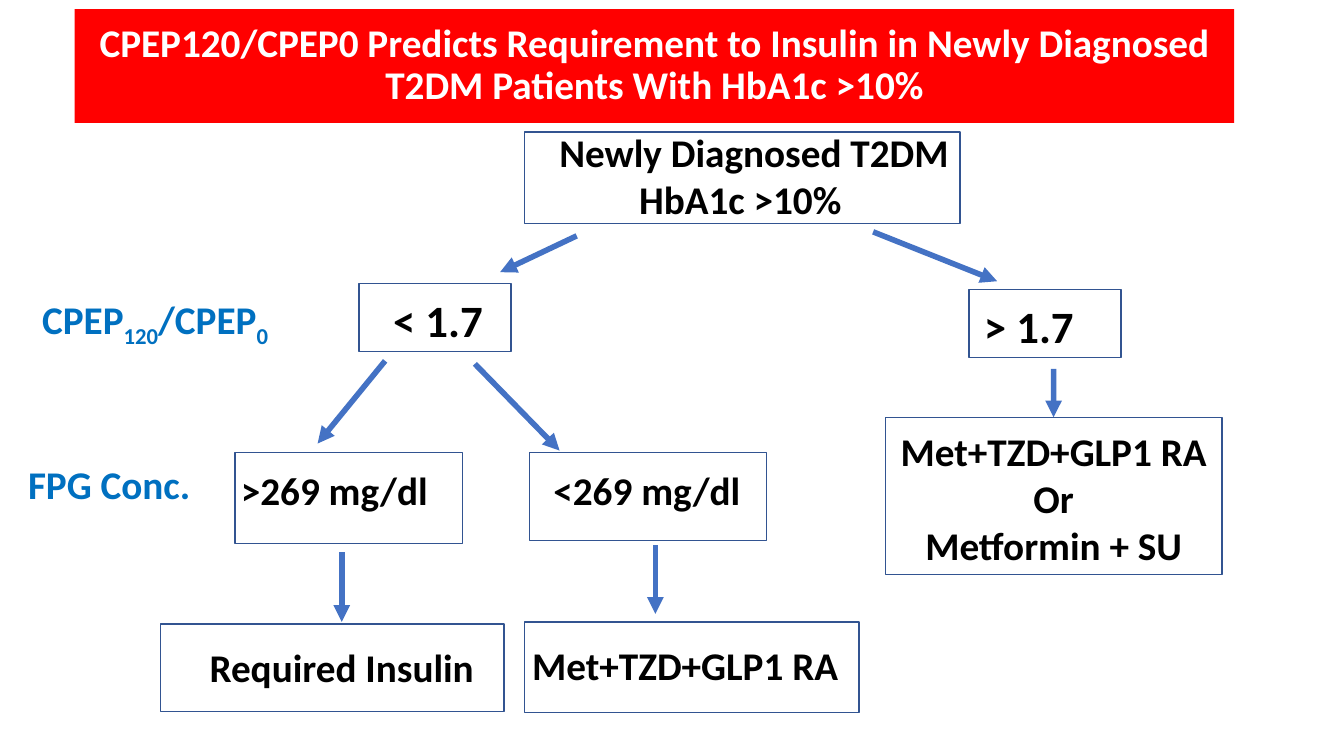
from dataclasses import dataclass

import pptx
import pptx.dml.color
import pptx.enum.shapes
import pptx.enum.text
import pptx.oxml
import pptx.oxml.ns
import pptx.util
from pptx.util import Inches

COLORS = {
    "title_fill": "FF0000",
    "title_text": "FFFFFF",
    "text": "000000",
    "row_label": "0070C0",
    "border": "325491",
    "arrow": "4472C4",
}
FONT = "Calibri"
ALIGN = pptx.enum.text.PP_ALIGN


@dataclass(frozen=True)
class Area:
    left: float
    top: float
    width: float
    height: float

    def lengths(self) -> list:
        return [Inches(v) for v in (self.left, self.top, self.width, self.height)]


@dataclass(frozen=True)
class Label:
    """Bold text; parts between underscores are set as subscripts."""
    text: str
    area: Area
    size: int = 28
    color: str = "text"
    align: ALIGN = ALIGN.LEFT
    last_indent: float = 0


@dataclass(frozen=True)
class Node:
    frame: Area
    label: Label


@dataclass(frozen=True)
class Arrow:
    start: tuple[float, float]
    end: tuple[float, float]
    target: str = ""


TITLE = Label(
    "CPEP120/CPEP0 Predicts Requirement to Insulin in Newly Diagnosed "
    "T2DM Patients With HbA1c >10%",
    Area(0.74, 0.09, 11.5, 1.13), color="title_text", align=ALIGN.CENTER)

NODES = {
    "diagnosis": Node(Area(5.2, 1.31, 4.32, 0.91),
                      Label("Newly Diagnosed T2DM\nHbA1c >10%",
                            Area(5.45, 1.22, 4.07, 1.04), last_indent=0.79)),
    "low ratio": Node(Area(3.56, 2.81, 1.51, 0.68),
                      Label("< 1.7", Area(3.8, 2.85, 1.4, 0.64), size=32)),
    "high ratio": Node(Area(9.61, 2.87, 1.51, 0.68),
                       Label("> 1.7", Area(9.66, 2.91, 1.4, 0.64), size=32)),
    "high glucose": Node(Area(2.33, 4.49, 2.26, 0.9),
                         Label(">269 mg/dl", Area(2.29, 4.58, 2.21, 0.57))),
    "low glucose": Node(Area(5.25, 4.49, 2.35, 0.87),
                        Label("<269 mg/dl", Area(5.39, 4.58, 2.21, 0.57))),
    "oral options": Node(Area(8.78, 4.14, 3.34, 1.56),
                         Label("Met+TZD+GLP1 RA\nOr\nMetformin + SU",
                               Area(8.78, 4.19, 3.34, 1.51), align=ALIGN.CENTER)),
    "insulin": Node(Area(1.59, 6.19, 3.41, 0.87),
                    Label("Required Insulin", Area(1.98, 6.33, 3.32, 0.57))),
    "triple therapy": Node(Area(5.2, 6.17, 3.32, 0.9),
                           Label("Met+TZD+GLP1 RA", Area(5.18, 6.31, 3.4, 0.57))),
}

ROW_LABELS = [
    Label("CPEP_120_/CPEP_0", Area(0.32, 2.88, 2.55, 0.57), color="row_label"),
    Label("FPG Conc.", Area(0.18, 4.52, 1.9, 0.57), color="row_label"),
]

ARROWS = [
    Arrow((5.72, 2.34), (4.96, 2.7)),
    Arrow((8.66, 2.3), (9.89, 2.79)),
    Arrow((3.82, 3.58), (3.15, 4.4)),
    Arrow((4.71, 3.61), (5.55, 4.47)),
    Arrow((10.45, 3.66), (10.45, 4.14), target="oral options"),
    Arrow((3.39, 5.48), (3.39, 6.17)),
    Arrow((6.5, 5.41), (6.5, 6.09)),
]


def rgb(name: str) -> pptx.dml.color.RGBColor:
    return pptx.dml.color.RGBColor.from_string(COLORS[name])


def draw_label(page, label: Label):
    box = page.shapes.add_textbox(*label.area.lengths())
    frame = box.text_frame
    frame.word_wrap = True
    frame.auto_size = pptx.enum.text.MSO_AUTO_SIZE.SHAPE_TO_FIT_TEXT
    for number, line in enumerate(label.text.split("\n")):
        para = frame.add_paragraph() if number else frame.paragraphs[0]
        para.alignment = label.align
        for index, part in enumerate(line.split("_")):
            span = para.add_run()
            span.text = part
            span.font.name = FONT
            span.font.size = pptx.util.Pt(label.size)
            span.font.bold = True
            span.font.color.rgb = rgb(label.color)
            if index % 2:
                span.font._element.set("baseline", "-25000")
    if label.last_indent:
        properties = frame.paragraphs[-1]._p.get_or_add_pPr()
        properties.set("marL", str(Inches(label.last_indent)))
    return box


def draw_title(page, label: Label) -> None:
    box = draw_label(page, label)
    box.fill.solid()
    box.fill.fore_color.rgb = rgb("title_fill")
    frame = box.text_frame
    frame.auto_size = pptx.enum.text.MSO_AUTO_SIZE.NONE
    frame.vertical_anchor = pptx.enum.text.MSO_ANCHOR.MIDDLE
    frame.paragraphs[0].line_spacing = 0.9


def draw_node(page, node: Node):
    box = page.shapes.add_shape(
        pptx.enum.shapes.MSO_SHAPE.RECTANGLE, *node.frame.lengths())
    box.shadow.inherit = False
    box.fill.background()
    box.line.color.rgb = rgb("border")
    box.line.width = pptx.util.Pt(1)
    draw_label(page, node.label)
    return box


def draw_arrow(page, arrow: Arrow, boxes: dict) -> None:
    line = page.shapes.add_connector(
        pptx.enum.shapes.MSO_CONNECTOR.STRAIGHT,
        *(Inches(v) for v in arrow.start + arrow.end))
    if arrow.target:
        line.end_connect(boxes[arrow.target], 0)
    line.line.color.rgb = rgb("arrow")
    line.line.width = pptx.util.Pt(4)
    head = pptx.oxml.parse_xml(
        f'<a:tailEnd {pptx.oxml.ns.nsdecls("a")} type="triangle"/>')
    line.line._get_or_add_ln().append(head)
    line._element.spPr.append(
        pptx.oxml.parse_xml(f'<a:effectLst {pptx.oxml.ns.nsdecls("a")}/>'))


def main() -> None:
    deck = pptx.Presentation()
    deck.slide_width, deck.slide_height = Inches(13.33), Inches(7.5)
    page = deck.slides.add_slide(deck.slide_layouts[6])

    # Heading and row labels
    draw_title(page, TITLE)
    for label in ROW_LABELS:
        draw_label(page, label)

    # Decision tree
    boxes = {name: draw_node(page, node) for name, node in NODES.items()}
    for arrow in ARROWS:
        draw_arrow(page, arrow, boxes)

    deck.save("out.pptx")


if __name__ == "__main__":
    main()
